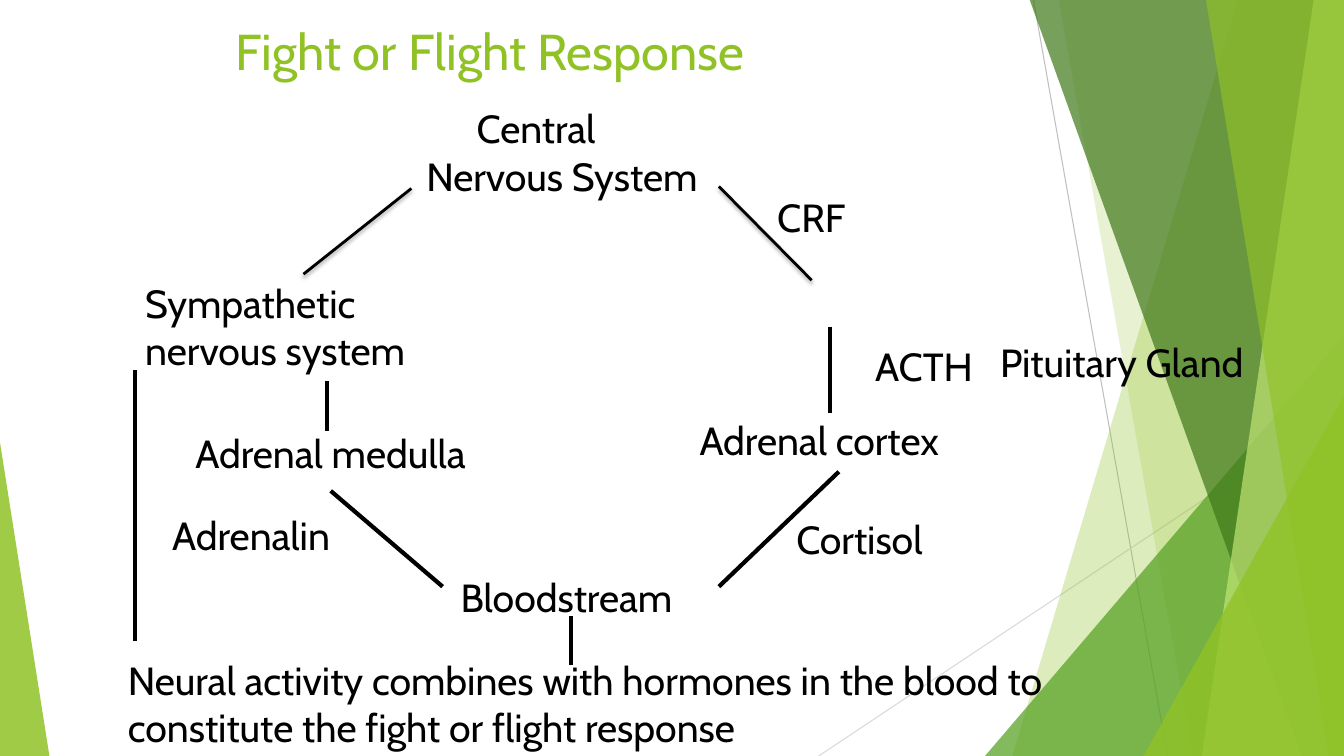
from lxml import etree
from pptx import Presentation
from pptx.dml.color import RGBColor
from pptx.enum.shapes import MSO_CONNECTOR, MSO_SHAPE
from pptx.enum.text import MSO_ANCHOR, MSO_AUTO_SIZE, PP_ALIGN
from pptx.oxml.ns import qn
from pptx.util import Inches, Pt

STRAIGHT = MSO_CONNECTOR.STRAIGHT
TRIANGLE = MSO_SHAPE.ISOSCELES_TRIANGLE
LEFT = PP_ALIGN.LEFT
TOP, MIDDLE = MSO_ANCHOR.TOP, MSO_ANCHOR.MIDDLE
GROW, FIXED = MSO_AUTO_SIZE.SHAPE_TO_FIT_TEXT, MSO_AUTO_SIZE.NONE

WIDTH, HEIGHT = 13.33, 7.5
FONT = "Cabin"
COLORS = {
    "green": "90C226",
    "leaf": "54A021",
    "forest": "3F7819",
    "lime": "C0E474",
    "text": "000000",
    "gray": "BFBFBF",
    "light gray": "D9D9D9",
}

# Slanted bands reach the right edge: top x, bottom x, colour, opacity
BACK_BANDS = [(12.28, 10.04, "green", 30), (10.5, 11.83, "green", 20)]
FRONT_BANDS = [
    (10.21, 12.91, "forest", 70),
    (13.03, 11.92, "lime", 70),
    (11.96, 13.18, "green", 65),
]

# Diagram labels: text, box, first-line indent
LABELS = [
    ("Central Nervous System", (4.13, 0.99, 2.95, 1.04), 0.5),
    ("CRF", (7.61, 1.87, 1, 0.57), 0),
    ("Sympathetic nervous system", (1.34, 2.72, 3.35, 1.04), 0),
    ("Pituitary Gland", (9.82, 3.31, 2.9, 0.57), 0),
    ("ACTH", (8.58, 3.35, 1.71, 0.57), 0),
    ("Adrenal cortex", (6.84, 4.08, 2.9, 0.57), 0),
    ("Adrenal medulla", (1.84, 4.21, 3.35, 0.57), 0),
    ("Cortisol", (7.8, 5.06, 1.92, 0.57), 0),
    ("Adrenalin", (1.61, 5.02, 1.91, 0.57), 0),
    ("Bloodstream", (4.47, 5.64, 2.66, 0.57), 0),
    ("Neural activity combines with hormones in the blood to "
     "constitute the fight or flight response", (1.17, 6.46, 10.02, 1.04), 0),
]

# Diagram links: start, end
PLAIN_LINKS = [
    ((8.23, 3.24), (8.23, 4.1)),
    ((3.24, 3.78), (3.24, 4.28)),
    ((1.34, 3.67), (1.34, 6.36)),
    ((8.32, 4.68), (7.13, 5.82)),
    ((3.28, 4.87), (4.39, 5.82)),
    ((5.66, 6.11), (5.66, 6.6)),
]
SHADOW_LINKS = [((4.08, 1.87), (3.01, 2.72)), ((7.13, 1.85), (8.05, 2.78))]


def rgb(color):
    return RGBColor.from_string(COLORS[color])


def add_alpha(color_element, percent):
    etree.SubElement(color_element, qn("a:alpha"), val=str(percent * 1000))


def write_text(shape, text, size=28, color="text", anchor=TOP, indent=0, grow=True):
    frame = shape.text_frame
    frame.word_wrap = True
    frame.auto_size = GROW if grow else FIXED
    frame.vertical_anchor = anchor
    paragraph = frame.paragraphs[0]
    paragraph.alignment = LEFT
    if indent:
        paragraph._p.get_or_add_pPr().set("indent", str(Inches(indent)))
    run = paragraph.add_run()
    run.text = text
    run.font.name = FONT
    run.font.size = Pt(size)
    run.font.color.rgb = rgb(color)


def fill_shape(shape, color, opacity):
    shape.shadow.inherit = False
    shape.line.fill.background()
    shape.fill.solid()
    shape.fill.fore_color.rgb = rgb(color)
    add_alpha(next(shape._element.spPr.iter(qn("a:srgbClr"))), opacity)


def add_line(slide, start, end, color="text", weight=3, shadow=False):
    points = [Inches(value) for value in (*start, *end)]
    line = slide.shapes.add_connector(STRAIGHT, *points)
    line.line.color.rgb = rgb(color)
    line.line.width = Pt(weight)
    effects = etree.SubElement(line._element.spPr, qn("a:effectLst"))
    if shadow:
        outer = etree.SubElement(
            effects, qn("a:outerShdw"), blurRad=str(Pt(3)), dist=str(Pt(2)),
            dir="5400000", rotWithShape="0")
        shade = etree.SubElement(outer, qn("a:srgbClr"), val=COLORS["text"])
        add_alpha(shade, 35)


def add_band(slide, top_x, bottom_x, color, opacity):
    corners = [(WIDTH, -0.01), (WIDTH, HEIGHT), (bottom_x, HEIGHT)]
    builder = slide.shapes.build_freeform(Inches(top_x), Inches(-0.01))
    builder.add_line_segments([(Inches(x), Inches(y)) for x, y in corners])
    fill_shape(builder.convert_to_shape(), color, opacity)


def add_triangle(slide, box, apex, color, opacity):
    shape = slide.shapes.add_shape(TRIANGLE, *map(Inches, box))
    shape.adjustments[0] = apex
    fill_shape(shape, color, opacity)


def add_corner_triangle(slide, left, top, color, opacity):
    box = (left, top, WIDTH - left, HEIGHT - top)
    add_triangle(slide, box, 1, color, opacity)


def add_decoration(slide):
    # Thin crossing lines
    add_line(slide, (10.25, 0), (11.58, HEIGHT), color="gray", weight=0.75)
    add_line(slide, (WIDTH, 4.03), (8.12, HEIGHT), color="light gray", weight=0.75)
    # Translucent green facets
    for band in BACK_BANDS:
        add_band(slide, *band)
    add_corner_triangle(slide, 9.77, 3.33, "leaf", 72)
    for band in FRONT_BANDS:
        add_band(slide, *band)
    add_corner_triangle(slide, 11.34, 3.93, "green", 80)
    # Left wedge
    add_triangle(slide, (0, 4.39, 0.49, 3.11), 0, "green", 85)


def add_title(slide, box):
    title = slide.shapes.title
    title.left, title.top, title.width, title.height = map(Inches, box)
    write_text(title, "Fight or Flight Response", size=36, color="green",
               anchor=MIDDLE, indent=1.5, grow=False)


def add_diagram(slide, left, top):
    for text, (x, y, width, height), indent in LABELS:
        box = (left + x, top + y, width, height)
        label = slide.shapes.add_textbox(*map(Inches, box))
        write_text(label, text, indent=indent)
    for links, weight, shadow in ((PLAIN_LINKS, 3, False), (SHADOW_LINKS, 2, True)):
        for (x1, y1), (x2, y2) in links:
            add_line(slide, (left + x1, top + y1), (left + x2, top + y2),
                     weight=weight, shadow=shadow)


def main():
    presentation = Presentation()
    presentation.slide_width = Inches(WIDTH)
    presentation.slide_height = Inches(HEIGHT)
    slide = presentation.slides.add_slide(presentation.slide_layouts[5])
    add_decoration(slide)
    add_title(slide, (0.74, 0.1, 9.4, 0.79))
    add_diagram(slide, 0, 0)
    presentation.save("out.pptx")


if __name__ == "__main__":
    main()
